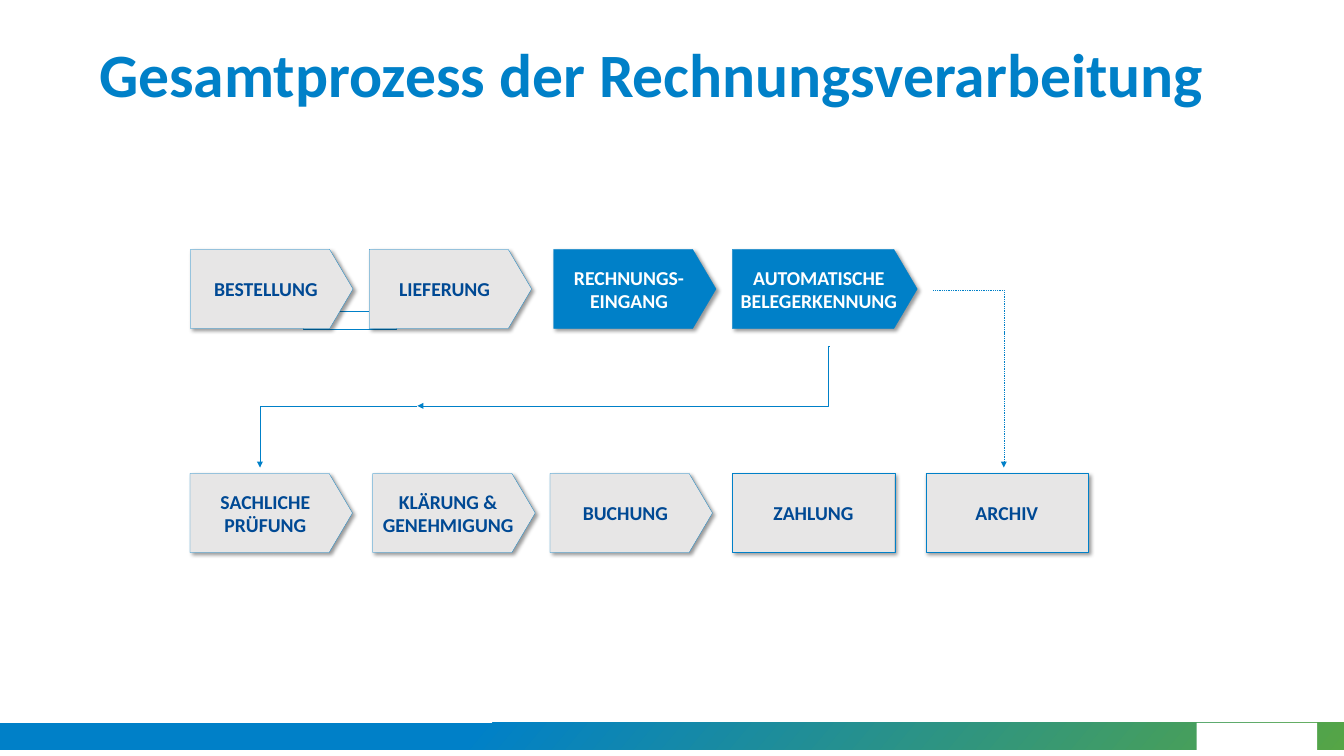
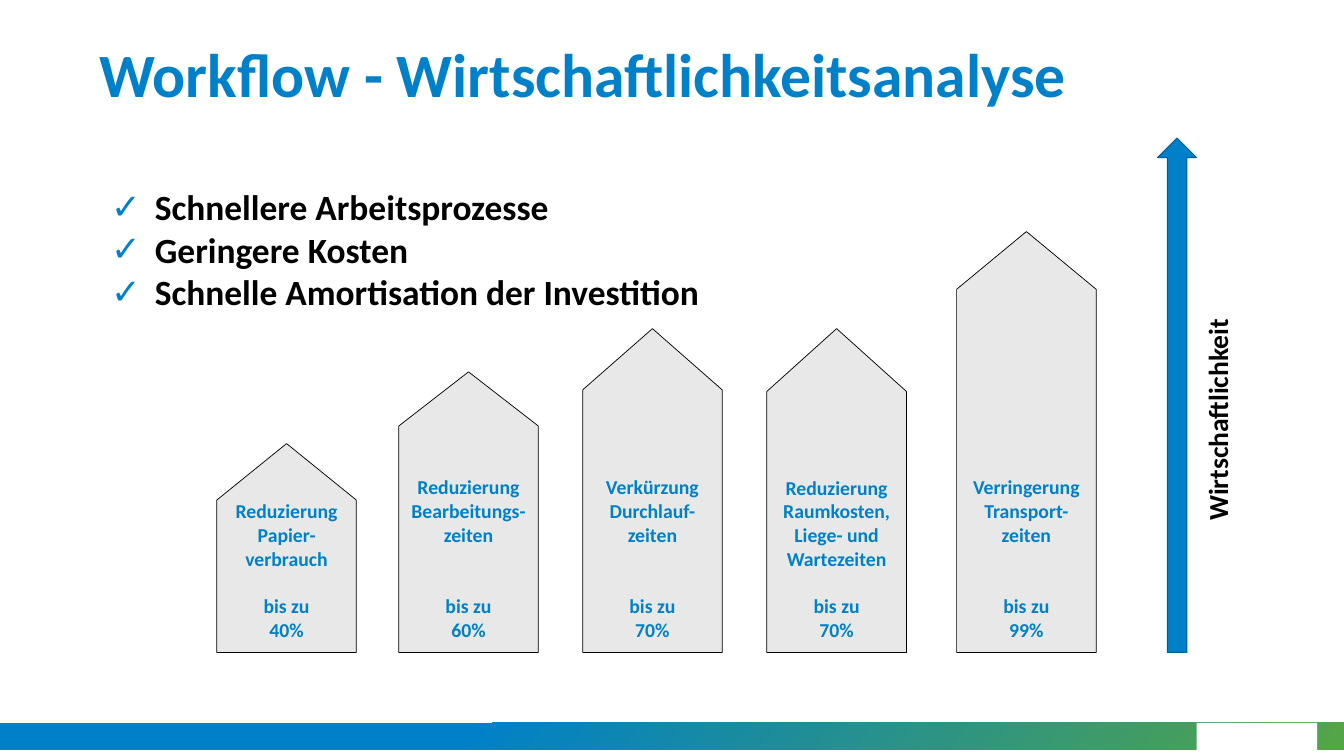
"""Builds two slides on invoice processing and workflow economics."""
from dataclasses import dataclass

from lxml import etree
from pptx import Presentation
from pptx import util as u
from pptx.dml.color import RGBColor
from pptx.enum import dml, shapes, text
from pptx.oxml.ns import qn


@dataclass(frozen=True)
class Theme:
    """Colours, font and type sizes of the deck."""
    blue: str = "0080C8"
    navy: str = "004994"
    deep_blue: str = "005F94"
    green: str = "55A546"
    pale: str = "E7E6E6"
    grey: str = "BFBFBF"
    white: str = "FFFFFF"
    black: str = "000000"
    font: str = "Calibri"
    title: float = 62.6
    bullet: float = 36
    axis: float = 28
    label: float = 20
    hairline: float = 0.25


THEME = Theme()
SLIDE_SIZE = (48.16, 27.1)
TITLE_BOX = (3.3, 0, 41.55, 5.23)
BAND_TOP, BAND_HEIGHT = 25.91, 0.97

STEP_WIDTH, STEP_HEIGHT, STEP_POINT = 5.82, 2.84, 0.295
ROW_TOPS = (8.94, 16.97)
STEPS = (
    (0, 6.83, STEP_WIDTH, STEP_POINT, False, ["BESTELLUNG"]),
    (0, 13.23, STEP_WIDTH, STEP_POINT, False, ["LIEFERUNG"]),
    (0, 19.84, STEP_WIDTH, STEP_POINT, True, ["RECHNUNGS-EINGANG"]),
    (0, 26.24, 6.63, STEP_POINT, True, ["AUTOMATISCHE BELEGERKENNUNG"]),
    (1, 6.81, STEP_WIDTH, STEP_POINT, False, ["SACHLICHE PRÜFUNG"]),
    (1, 13.36, STEP_WIDTH, STEP_POINT, False, ["KLÄRUNG &", "GENEHMIGUNG"]),
    (1, 19.71, STEP_WIDTH, STEP_POINT, False, ["BUCHUNG"]),
    (1, 26.24, STEP_WIDTH, 0, False, ["ZAHLUNG"]),
    (1, 33.17, STEP_WIDTH, 0, False, ["ARCHIV"]),
)

BENEFITS = (
    "Schnellere Arbeitsprozesse",
    "Geringere Kosten",
    "Schnelle Amortisation der Investition",
)
COLUMN_BASE, COLUMN_WIDTH = 23.39, 5.0
LABEL_BASE, LABEL_WIDTH, LABEL_HEIGHT = 23.14, 5.1, 8.0
LABEL_LINE = 24.4
SAVINGS = (
    (10.27, 7.49, 0.405, 1, ["Reduzierung Papier-verbrauch"], "40%"),
    (16.79, 10.06, 0.388, 2, ["Reduzierung Bearbeitungs-zeiten"], "60%"),
    (23.38, 11.61, 0.439, 2, ["Verkürzung Durchlauf-zeiten"], "70%"),
    (29.98, 11.61, 0.45, 1,
     ["Reduzierung Raumkosten,", "Liege- und Wartezeiten"], "70%"),
    (36.78, 15.09, 0.414, 2, ["Verringerung", "Transport-zeiten"], "99%"),
)


def rgb(colour):
    """Turn a hex string into a colour."""
    return RGBColor.from_string(colour)


def cm(*lengths):
    """Turn numbers into lengths in centimetres."""
    return [u.Cm(length) for length in lengths]


def add_child(parent, tag, **attributes):
    """Append a drawing element with its attributes."""
    child = etree.SubElement(parent, qn(tag))
    for key, value in attributes.items():
        child.set(key, str(value))
    return child


def write(frame, lines, size, colour, align=text.PP_ALIGN.LEFT):
    """Write bold paragraphs into a text frame."""
    for index, line in enumerate(lines):
        paragraph = frame.paragraphs[0] if index == 0 else frame.add_paragraph()
        paragraph.alignment = align
        run = paragraph.add_run()
        run.text = line
        run.font.name = THEME.font
        run.font.size = u.Pt(size)
        run.font.bold = True
        run.font.color.rgb = rgb(colour)


def set_margins(frame, side, edge):
    """Set the inner margins of a text frame."""
    frame.margin_left = frame.margin_right = u.Cm(side)
    frame.margin_top = frame.margin_bottom = u.Cm(edge)


def add_block(slide, preset, box, fill, line=None, width=THEME.hairline):
    """Add a flat preset shape."""
    block = slide.shapes.add_shape(preset, *cm(*box))
    block.shadow.inherit = False
    block.fill.solid()
    block.fill.fore_color.rgb = rgb(fill)
    if line:
        block.line.color.rgb = rgb(line)
        block.line.width = u.Pt(width)
    else:
        block.line.fill.background()
    return block


def add_label(slide, box, lines, size, colour):
    """Add a centred, wrapping text box."""
    label = slide.shapes.add_textbox(*cm(*box))
    label.text_frame.word_wrap = True
    write(label.text_frame, lines, size, colour, text.PP_ALIGN.CENTER)
    return label


def add_elbow(slide, start, end, bend, dashed=False):
    """Add an elbow arrow that turns at the given share of its width."""
    elbow = slide.shapes.add_connector(
        shapes.MSO_CONNECTOR.ELBOW, *cm(*start, *end))
    elbow.line.color.rgb = rgb(THEME.blue)
    elbow.line.width = u.Pt(THEME.hairline)
    if dashed:
        elbow.line.dash_style = dml.MSO_LINE.DASH
    properties = elbow.element.spPr
    guides = properties.find(qn("a:prstGeom")).find(qn("a:avLst"))
    add_child(guides, "a:gd", name="adj1", fmla=f"val {round(bend * 100000)}")
    add_child(properties.find(qn("a:ln")), "a:tailEnd", type="triangle")
    add_child(properties, "a:effectLst")


def add_step(slide, row, left, width, point, active, lines):
    """Add one process step with its soft shadow."""
    fill, colour = ((THEME.blue, THEME.white) if active
                    else (THEME.pale, THEME.navy))
    step = add_block(slide, shapes.MSO_SHAPE.PENTAGON,
                     (left, ROW_TOPS[row], width, STEP_HEIGHT), fill, THEME.blue)
    step.adjustments[0] = point
    effects = step.element.spPr.find(qn("a:effectLst"))
    shadow = add_child(effects, "a:outerShdw", blurRad=u.Pt(4), dist=u.Pt(3),
                       dir=45 * 60000, algn="tl", rotWithShape=0)
    add_child(add_child(shadow, "a:srgbClr", val=THEME.black),
              "a:alpha", val=40000)
    frame = step.text_frame
    frame.word_wrap = True
    frame.vertical_anchor = text.MSO_ANCHOR.MIDDLE
    set_margins(frame, 0.24, 0.12)
    write(frame, lines, THEME.label, colour, text.PP_ALIGN.CENTER)


def add_saving(slide, centre, height, point, blanks, reason, share):
    """Add one upright column with its reason and share."""
    column = add_block(
        slide, shapes.MSO_SHAPE.PENTAGON,
        (centre - height / 2, COLUMN_BASE - (height + COLUMN_WIDTH) / 2,
         height, COLUMN_WIDTH),
        THEME.grey, THEME.black, 0.75)
    column.rotation = 270
    column.adjustments[0] = point
    colour = column.element.spPr.find(qn("a:solidFill"))[0]
    add_child(colour, "a:alpha", val=35000)
    label = add_label(
        slide, (centre - LABEL_WIDTH / 2, LABEL_BASE - LABEL_HEIGHT,
                LABEL_WIDTH, LABEL_HEIGHT),
        [*reason, "bis zu", share], THEME.label, THEME.blue)
    frame = label.text_frame
    frame.vertical_anchor = text.MSO_ANCHOR.BOTTOM
    set_margins(frame, 0.3, 0.15)
    frame.paragraphs[len(reason)].space_before = u.Pt(blanks * LABEL_LINE)


def fill_checklist(body, lines):
    """Turn the body placeholder into a list with check marks."""
    body.left, body.top, body.width, body.height = cm(3.68, 6.5, 29.13, 4.93)
    frame = body.text_frame
    frame.auto_size = text.MSO_AUTO_SIZE.NONE
    frame.vertical_anchor = text.MSO_ANCHOR.TOP
    set_margins(frame, 0.3, 0.15)
    write(frame, lines, THEME.bullet, THEME.black)
    for paragraph in frame.paragraphs:
        properties = paragraph._p.get_or_add_pPr()
        properties.set("marL", str(u.Cm(1.57)))
        properties.set("indent", str(-u.Cm(1.57)))
        add_child(add_child(properties, "a:buClr"), "a:srgbClr", val=THEME.blue)
        add_child(properties, "a:buChar", char="✓")
        paragraph.space_before = u.Pt(0)


def style_master(master, slide):
    """Place the title and the footer band on the master."""
    title = master.placeholders.get(shapes.PP_PLACEHOLDER.TITLE)
    title.left, title.top, title.width, title.height = cm(*TITLE_BOX)
    rectangle = shapes.MSO_SHAPE.RECTANGLE
    band = add_block(slide, rectangle,
                     (0, BAND_TOP, SLIDE_SIZE[0], BAND_HEIGHT), THEME.blue)
    band.fill.gradient()
    band.fill.gradient_angle = 320
    for stop, position, colour in zip(band.fill.gradient_stops, (0.35, 1),
                                      (THEME.blue, THEME.green)):
        stop.position = position
        stop.color.rgb = rgb(colour)
    gap = add_block(slide, rectangle,
                    (42.88, BAND_TOP, 4.32, BAND_HEIGHT), THEME.white)
    for part in (band, gap):
        master.shapes.element.append(part.element)


def add_slide(deck, layout, heading):
    """Add a slide with its formatted title."""
    slide = deck.slides.add_slide(deck.slide_layouts.get_by_name(layout))
    frame = slide.shapes.title.text_frame
    frame.auto_size = text.MSO_AUTO_SIZE.NONE
    frame.vertical_anchor = text.MSO_ANCHOR.MIDDLE
    write(frame, [heading], THEME.title, THEME.blue)
    return slide


def build_process(slide):
    """Draw the invoice process."""
    add_elbow(slide, (33.45, 10.41), (35.97, 16.76), 1.001, dashed=True)
    add_block(slide, shapes.MSO_SHAPE.RECTANGLE, (10.85, 11.15, 3.35, 0.64),
              THEME.white, THEME.blue)
    for step in STEPS:
        add_step(slide, *step)
    add_elbow(slide, (29.72, 12.42), (14.96, 14.55), 0.002)
    add_elbow(slide, (14.96, 14.55), (9.32, 16.76), 1.001)


def build_economics(slide):
    """Draw the savings columns, the benefits and the axis arrow."""
    for saving in SAVINGS:
        add_saving(slide, *saving)
    fill_checklist(slide.placeholders[1], BENEFITS)
    add_block(slide, shapes.MSO_SHAPE.UP_ARROW, (41.48, 4.95, 1.4, 18.44),
              THEME.blue, THEME.deep_blue, 1)
    axis = add_label(slide, (35.23, 14.33, 16.79, 1.45),
                     ["Wirtschaftlichkeit"], THEME.axis, THEME.black)
    axis.rotation = 270


def main():
    """Build and save the deck."""
    deck = Presentation()
    deck.slide_width, deck.slide_height = cm(*SLIDE_SIZE)
    process = add_slide(deck, "Title Only",
                        "Gesamtprozess der Rechnungsverarbeitung")
    style_master(deck.slide_master, process)
    build_process(process)
    economics = add_slide(deck, "Title and Content",
                          "Workflow - Wirtschaftlichkeitsanalyse")
    build_economics(economics)
    deck.save("out.pptx")


if __name__ == "__main__":
    main()
